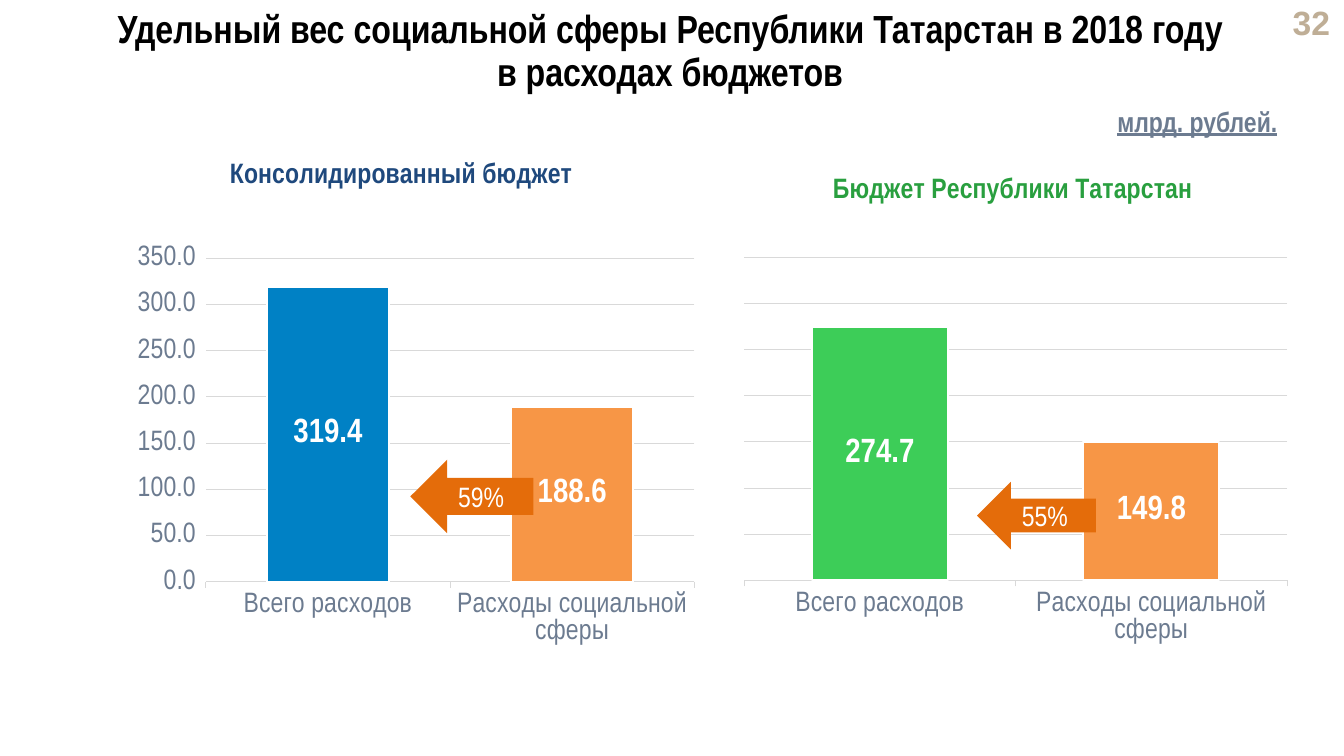
from lxml import etree
from pptx import Presentation
from pptx.chart.data import CategoryChartData
from pptx.dml.color import RGBColor
from pptx.enum.chart import XL_CHART_TYPE, XL_LABEL_POSITION, XL_TICK_MARK
from pptx.enum.shapes import MSO_SHAPE
from pptx.enum.text import MSO_ANCHOR, PP_ALIGN
from pptx.oxml.ns import qn
from pptx.util import Inches, Pt

COLUMN = XL_CHART_TYPE.COLUMN_CLUSTERED
MIDDLE = XL_LABEL_POSITION.CENTER
OUT = XL_TICK_MARK.OUTSIDE
ARROW = MSO_SHAPE.LEFT_ARROW
TOP, MID = MSO_ANCHOR.TOP, MSO_ANCHOR.MIDDLE
CENTER, RIGHT = PP_ALIGN.CENTER, PP_ALIGN.RIGHT

BLACK = RGBColor(0x00, 0x00, 0x00)
WHITE = RGBColor(0xFF, 0xFF, 0xFF)
SAND = RGBColor(0xBF, 0xAE, 0x96)
SLATE = RGBColor(0x6C, 0x7B, 0x90)
GRID = RGBColor(0xD9, 0xD9, 0xD9)
NAVY = RGBColor(0x1F, 0x49, 0x7D)
BLUE = RGBColor(0x00, 0x81, 0xC5)
FOREST = RGBColor(0x29, 0x9F, 0x3F)
GREEN = RGBColor(0x3D, 0xCD, 0x58)
ORANGE = RGBColor(0xF7, 0x96, 0x46)
RUST = RGBColor(0xE4, 0x6C, 0x0A)

NARROW = "Arial Narrow"
GROUPS = ["Всего расходов", "Расходы социальной сферы"]


def style(font, size=20, color=SLATE, bold=False, name=NARROW, under=None):
    font.size = Pt(size)
    font.color.rgb = color
    font.bold = bold
    font.name = name
    font.underline = under


def write(frame, text, align=CENTER, anchor=TOP, wrap=True, pitch=None, **look):
    frame.word_wrap = wrap
    frame.vertical_anchor = anchor
    para = frame.paragraphs[0]
    para.text = text
    para.alignment = align
    para.line_spacing = pitch
    for run in para.runs:
        style(run.font, **look)


def rule(line):
    line.color.rgb = GRID
    line.width = Pt(0.75)


class Page:
    def __init__(self, deck):
        self.slide = deck.slides.add_slide(deck.slide_layouts[5])
        self.shapes = self.slide.shapes

    def title(self, text, box):
        head = self.shapes.title
        head.left, head.top, head.width, head.height = map(Inches, box)
        write(head.text_frame, text, pitch=0.9, size=28, color=BLACK, bold=True)

    def text(self, text, box, **look):
        label = self.shapes.add_textbox(*map(Inches, box))
        write(label.text_frame, text, **look)

    def arrow(self, text, box):
        arrow = self.shapes.add_shape(ARROW, *map(Inches, box))
        arrow.shadow.inherit = False
        arrow.fill.solid()
        arrow.fill.fore_color.rgb = RUST
        arrow.line.fill.background()
        write(arrow.text_frame, text, anchor=MID, color=WHITE)

    def chart(self, title, box, values, fills, ink, area, scale):
        data = CategoryChartData(number_format="0.0")
        data.categories = GROUPS
        data.add_series("Series 1", values)
        chart = self.shapes.add_chart(COLUMN, *map(Inches, box), data).chart
        style(chart.font, size=10, color=BLACK, name="Calibri")
        chart.has_legend = False
        write(chart.chart_title.text_frame, title, color=ink, bold=True)
        self.axes(chart, scale)
        self.bars(chart.plots[0], fills)
        self.place(chart, area)

    def axes(self, chart, scale):
        base = chart.category_axis
        base.major_tick_mark = OUT
        rule(base.format.line)
        style(base.tick_labels.font)
        side = chart.value_axis
        side.minimum_scale, side.maximum_scale, side.major_unit = 0, 350, 50
        side.has_major_gridlines = True
        rule(side.major_gridlines.format.line)
        side.visible = scale
        if scale:
            side.major_tick_mark = OUT
            side.format.line.fill.background()
            style(side.tick_labels.font)
            side.tick_labels.number_format = "0.0"
            side.tick_labels.number_format_is_linked = False

    def bars(self, plot, fills):
        plot.gap_width = 100
        plot.vary_by_categories = False
        series = plot.series[0]
        for index, color in enumerate(fills):
            form = series.points[index].format
            form.fill.solid()
            form.fill.fore_color.rgb = color
            form.line.color.rgb = WHITE
            form.line.width = Pt(1.5)
        labels = series.data_labels
        labels.show_value = True
        labels.position = MIDDLE
        labels.number_format = "0.0"
        labels.number_format_is_linked = False
        style(labels.font, size=24, color=WHITE, bold=True)

    def place(self, chart, area):
        plot = chart.element.find(".//" + qn("c:plotArea"))
        for old in plot.findall(qn("c:layout")):
            plot.remove(old)
        layout = etree.Element(qn("c:layout"))
        plot.insert(0, layout)
        manual = etree.SubElement(layout, qn("c:manualLayout"))
        marks = [("layoutTarget", "inner"), ("xMode", "edge"), ("yMode", "edge")]
        for tag, value in marks + list(zip("xywh", area)):
            etree.SubElement(manual, qn("c:" + tag)).set("val", str(value))


def main():
    deck = Presentation()
    deck.slide_width, deck.slide_height = Inches(13.33), Inches(7.5)
    page = Page(deck)
    page.text("32", (12.44, 0.05, 0.85, 0.34), align=RIGHT, anchor=MID,
              size=24, color=SAND, bold=True, name="Arial")
    page.title("Удельный вес социальной сферы Республики Татарстан в 2018 году\v"
               "в расходах бюджетов", (0.75, 0.05, 11.79, 1.05))
    page.chart("Консолидированный бюджет", (0.75, 1.36, 6.46, 5.73),
               (319.4, 188.6), (BLUE, ORANGE), NAVY,
               (0.2, 0.21, 0.75, 0.56), True)
    page.chart("Бюджет Республики Татарстан", (7.21, 1.52, 5.67, 5.17),
               (274.7, 149.8), (GREEN, ORANGE), FOREST,
               (0.03, 0.2, 0.95, 0.62), False)
    page.text("млрд. рублей.", (10.87, 0.99, 2.01, 0.28), wrap=False,
              bold=True, under=True)
    page.arrow("59%", (4.07, 4.56, 1.22, 0.73))
    page.arrow("55%", (9.69, 4.78, 1.18, 0.67))
    deck.save("out.pptx")


if __name__ == "__main__":
    main()
